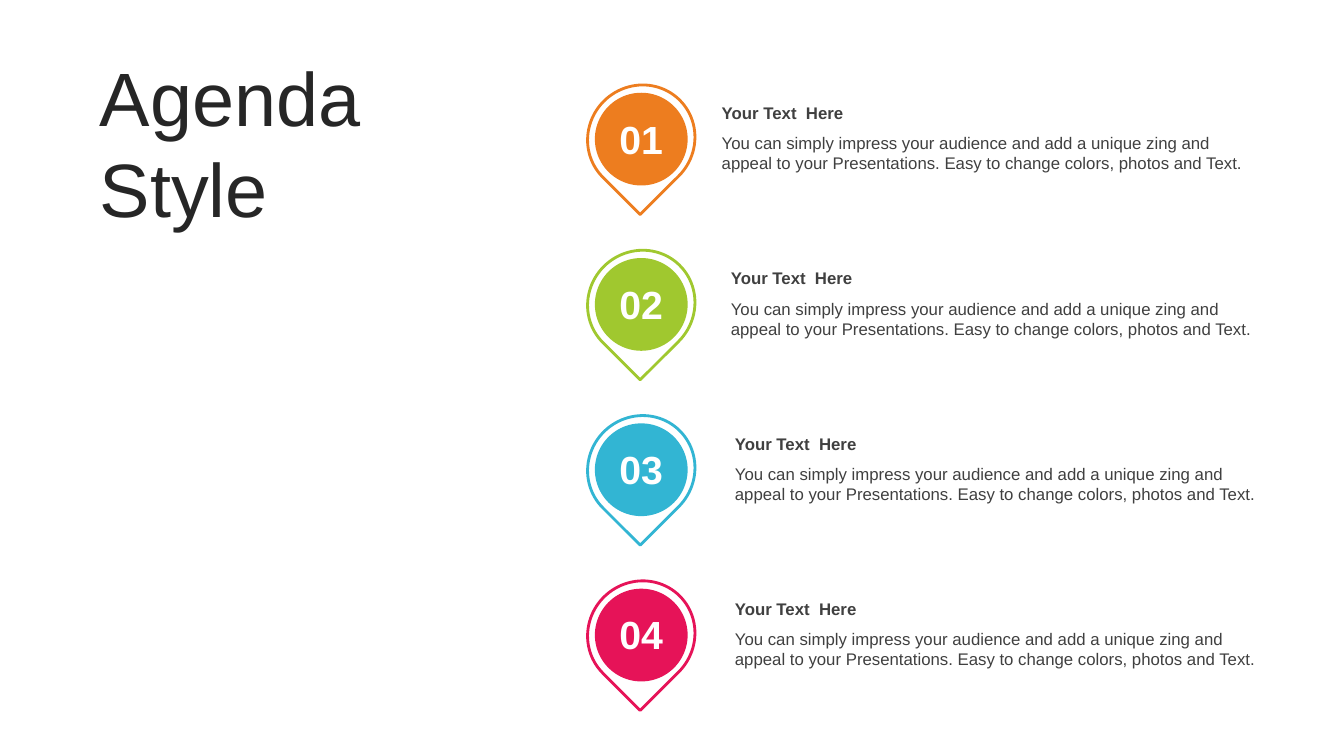
from dataclasses import dataclass

import pptx
import pptx.dml.color
import pptx.enum.shapes
import pptx.enum.text
import pptx.shapes.autoshape
import pptx.shapes.group
import pptx.slide
import pptx.util
from pptx.util import Inches

FONT = "Arial"
WHITE, TITLE_GREY, TEXT_GREY = "FFFFFF", "262626", "404040"
FIRST_TOP, ROW_PITCH = 0.85, 1.64
HEADING = "Your Text  Here"
DESCRIPTION = (
    "You can simply impress your audience and add a unique zing and appeal "
    "to your Presentations. Easy to change colors, photos and Text."
)


@dataclass(frozen=True)
class AgendaItem:
    number: str
    color: str
    text_left: float


ITEMS = [
    AgendaItem("01", "ED7D1F", 7.06),
    AgendaItem("02", "A0C82F", 7.15),
    AgendaItem("03", "32B5D3", 7.19),
    AgendaItem("04", "E61358", 7.19),
]


def rgb(color: str) -> pptx.dml.color.RGBColor:
    return pptx.dml.color.RGBColor.from_string(color)


def write(
    frame: pptx.text.text.TextFrame,
    text: str,
    size: float,
    color: str,
    bold: bool = False,
    align: pptx.enum.text.PP_ALIGN = pptx.enum.text.PP_ALIGN.LEFT,
) -> None:
    frame.word_wrap = True
    para = frame.paragraphs[0]
    para.alignment = align
    span = para.add_run()
    span.text = text
    span.font.name = FONT
    span.font.size = pptx.util.Pt(size)
    span.font.bold = bold
    span.font.color.rgb = rgb(color)


def add_label(
    group: pptx.shapes.group.GroupShape,
    left: float,
    top: float,
    width: float,
    height: float,
) -> pptx.text.text.TextFrame:
    box = group.shapes.add_textbox(
        Inches(left), Inches(top), Inches(width), Inches(height)
    )
    box.text_frame.auto_size = pptx.enum.text.MSO_AUTO_SIZE.SHAPE_TO_FIT_TEXT
    return box.text_frame


def add_filled_shape(
    group: pptx.shapes.group.GroupShape,
    kind: pptx.enum.shapes.MSO_SHAPE,
    left: float,
    top: float,
    width: float,
    height: float,
    fill: str,
) -> pptx.shapes.autoshape.Shape:
    shape = group.shapes.add_shape(
        kind, Inches(left), Inches(top), Inches(width), Inches(height)
    )
    shape.shadow.inherit = False
    shape.fill.solid()
    shape.fill.fore_color.rgb = rgb(fill)
    shape.line.fill.background()
    return shape


def add_item(page: pptx.slide.Slide, item: AgendaItem, top: float) -> None:
    group = page.shapes.add_group_shape()
    group.name = f"Agenda item {item.number}"
    shapes = pptx.enum.shapes.MSO_SHAPE

    pin = add_filled_shape(group, shapes.TEAR, 5.82, top, 1.08, 1.05, WHITE)
    pin.rotation = 135
    pin.line.color.rgb = rgb(item.color)
    pin.line.width = pptx.util.Pt(2)
    add_filled_shape(group, shapes.OVAL, 5.9, top + 0.07, 0.92, 0.92, item.color)

    number = add_label(group, 5.97, top + 0.24, 0.78, 0.57)
    write(number, item.number, 28, WHITE, True, pptx.enum.text.PP_ALIGN.CENTER)
    heading = add_label(group, item.text_left, top + 0.12, 5.45, 0.3)
    write(heading, HEADING, 12, TEXT_GREY, True)
    description = add_label(group, item.text_left, top + 0.42, 5.45, 0.5)
    write(description, DESCRIPTION, 12, TEXT_GREY)


def add_title(page: pptx.slide.Slide) -> None:
    title = page.shapes.title
    title.left, title.top = Inches(0.89), Inches(0.45)
    title.width, title.height = Inches(3.72), Inches(1.92)
    title.text_frame.auto_size = pptx.enum.text.MSO_AUTO_SIZE.NONE
    title.text_frame.vertical_anchor = pptx.enum.text.MSO_ANCHOR.MIDDLE
    write(title.text_frame, "Agenda Style", 54, TITLE_GREY)


def main() -> None:
    deck = pptx.Presentation()
    deck.slide_width, deck.slide_height = Inches(13.33), Inches(7.5)
    page = deck.slides.add_slide(deck.slide_layouts.get_by_name("Title Only"))
    add_title(page)
    for row, item in enumerate(ITEMS):
        add_item(page, item, FIRST_TOP + row * ROW_PITCH)
    deck.save("out.pptx")


if __name__ == "__main__":
    main()
